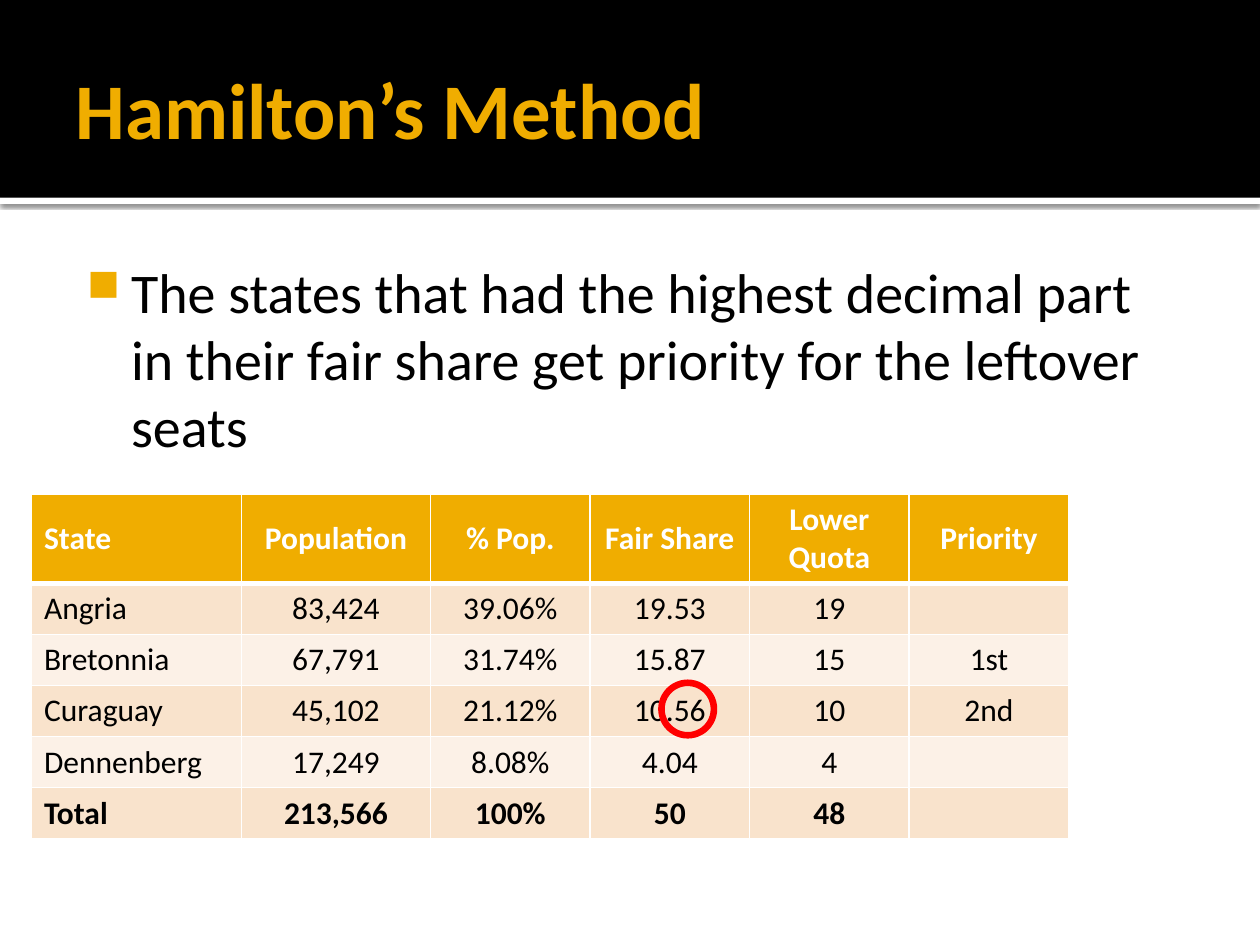
"""Build the Hamilton's Method slide with its apportionment table."""
from dataclasses import dataclass
from typing import Any

from lxml import etree
from pptx import Presentation
from pptx.dml.color import RGBColor
from pptx.enum import shapes, text
from pptx.oxml import ns
from pptx.util import Pt

FONT = "Calibri"
GOLD, BLACK, WHITE, RED = "F0AD00", "000000", "FFFFFF", "FF0000"
BANDS = ("F9E3CC", "FCF1E7")
COLUMN_WIDTHS = (120, 108, 91.2, 91.2, 91.2, 91.2)
HEADER_HEIGHT, ROW_HEIGHT = 50.4, 29.2
ROWS = (
    ("State", "Population", "% Pop.", "Fair Share", "Lower Quota", "Priority"),
    ("Angria", "83,424", "39.06%", "19.53", "19", ""),
    ("Bretonnia", "67,791", "31.74%", "15.87", "15", "1st"),
    ("Curaguay", "45,102", "21.12%", "10.56", "10", "2nd"),
    ("Dennenberg", "17,249", "8.08%", "4.04", "4", ""),
    ("Total", "213,566", "100%", "50", "48", ""),
)


@dataclass(frozen=True)
class Box:
    left: float
    top: float
    width: float
    height: float

    def lengths(self) -> tuple:
        return tuple(Pt(value) for value in (self.left, self.top, self.width, self.height))


@dataclass(frozen=True)
class Figure:
    kind: Any
    box: Box
    fill: str | None = None
    line: str | None = None
    line_width: float = 0


STRIP = Figure(shapes.MSO_SHAPE.RECTANGLE, Box(0, 113, 720, 3.6), fill=WHITE)
BANNER = Figure(shapes.MSO_SHAPE.RECTANGLE, Box(0, 0, 720, 113), fill=BLACK)
RING = Figure(shapes.MSO_SHAPE.OVAL, Box(378, 390.2, 30, 30), line=RED, line_width=3.78)
TITLE_BOX = Box(36, 12.2, 648, 98.6)
BODY_BOX = Box(36, 139.7, 648, 364.3)


def color(value: str) -> RGBColor:
    return RGBColor.from_string(value)


def apply(target: Any, values: dict) -> None:
    for name, value in values.items():
        setattr(target, name, value)


def child(parent: Any, tag: str, **attributes: Any) -> Any:
    values = {name: str(value) for name, value in attributes.items()}
    return etree.SubElement(parent, ns.qn(tag), values)


def draw_figure(slide: Any, figure: Figure) -> Any:
    shape = slide.shapes.add_shape(figure.kind, *figure.box.lengths())
    shape.shadow.inherit = False
    if figure.fill:
        shape.fill.solid()
        shape.fill.fore_color.rgb = color(figure.fill)
    else:
        shape.fill.background()
    if figure.line:
        shape.line.color.rgb = color(figure.line)
        shape.line.width = Pt(figure.line_width)
    else:
        shape.line.fill.background()
    return shape


def add_shadow(shape: Any) -> None:
    effects = shape._element.spPr.find(ns.qn("a:effectLst"))
    shadow = child(effects, "a:outerShdw", blurRad=Pt(2.5), dist=Pt(0.8),
                   dir=5400000, algn="tl", rotWithShape=0)
    child(child(shadow, "a:srgbClr", val=BLACK), "a:alpha", val=60000)


def write(frame: Any, content: str, size: float, fill: str, bold: bool, alignment: Any) -> Any:
    paragraph = frame.paragraphs[0]
    paragraph.alignment = alignment
    run = paragraph.add_run()
    run.text = content
    apply(run.font, {"name": FONT, "size": Pt(size), "bold": bold})
    run.font.color.rgb = color(fill)
    return paragraph


def format_frame(frame: Any, margins: tuple, anchor: Any) -> None:
    names = ("margin_left", "margin_top", "margin_right", "margin_bottom")
    apply(frame, dict(zip(names, map(Pt, margins))))
    apply(frame, {"word_wrap": True, "vertical_anchor": anchor,
                  "auto_size": text.MSO_AUTO_SIZE.NONE})


def draw_title(slide: Any) -> None:
    title = slide.shapes.title
    apply(title, dict(zip(("left", "top", "width", "height"), TITLE_BOX.lengths())))
    slide.shapes._spTree.append(title._element)
    format_frame(title.text_frame, (7.2, 3.6, 3.6, 3.6), text.MSO_ANCHOR.MIDDLE)
    write(title.text_frame, "Hamilton’s Method", 45, GOLD, True, text.PP_ALIGN.LEFT)


def draw_body(slide: Any) -> None:
    frame = slide.shapes.add_textbox(*BODY_BOX.lengths()).text_frame
    format_frame(frame, (4.3, 7.2, 7.2, 3.6), text.MSO_ANCHOR.TOP)
    paragraph = write(frame, "The states that had the highest decimal part in their fair "
                      "share get priority for the leftover seats",
                      32, BLACK, False, text.PP_ALIGN.LEFT)
    properties = paragraph._p.get_or_add_pPr()
    apply_indent = {"marL": Pt(34.6), "indent": Pt(-25.2)}
    for name, value in apply_indent.items():
        properties.set(name, str(value))
    child(child(properties, "a:buClr"), "a:srgbClr", val=GOLD)
    child(properties, "a:buSzPct", val=80000)
    child(properties, "a:buChar", char="■")


def format_cell(cell: Any, fill: str, bottom: float) -> None:
    properties = cell._tc.get_or_add_tcPr()
    for side, width in (("L", 1), ("R", 1), ("T", 1), ("B", bottom)):
        line = child(properties, f"a:ln{side}", w=Pt(width))
        child(child(line, "a:solidFill"), "a:srgbClr", val=WHITE)
    cell.fill.solid()
    cell.fill.fore_color.rgb = color(fill)
    cell.vertical_anchor = text.MSO_ANCHOR.MIDDLE


def draw_table(slide: Any) -> None:
    heights = [HEADER_HEIGHT] + [ROW_HEIGHT] * (len(ROWS) - 1)
    box = Box(18, 282.2, sum(COLUMN_WIDTHS), sum(heights))
    table = slide.shapes.add_table(len(ROWS), len(COLUMN_WIDTHS), *box.lengths()).table
    for column, width in zip(table.columns, COLUMN_WIDTHS):
        column.width = Pt(width)
    for row_index, (row, height) in enumerate(zip(ROWS, heights)):
        table.rows[row_index].height = Pt(height)
        header = row_index == 0
        bold = row_index in (0, len(ROWS) - 1)
        for column_index, content in enumerate(row):
            cell = table.cell(row_index, column_index)
            format_cell(cell, GOLD if header else BANDS[(row_index - 1) % 2], 3 if header else 1)
            if content:
                alignment = text.PP_ALIGN.CENTER if column_index else text.PP_ALIGN.LEFT
                write(cell.text_frame, content, 18, WHITE if header else BLACK, bold, alignment)


def main() -> None:
    presentation = Presentation()
    apply(presentation, {"slide_width": Pt(720), "slide_height": Pt(540)})
    slide = presentation.slides.add_slide(presentation.slide_layouts[5])
    add_shadow(draw_figure(slide, STRIP))
    draw_figure(slide, BANNER)
    draw_title(slide)
    draw_body(slide)
    draw_table(slide)
    draw_figure(slide, RING)
    presentation.save("out.pptx")


if __name__ == "__main__":
    main()
